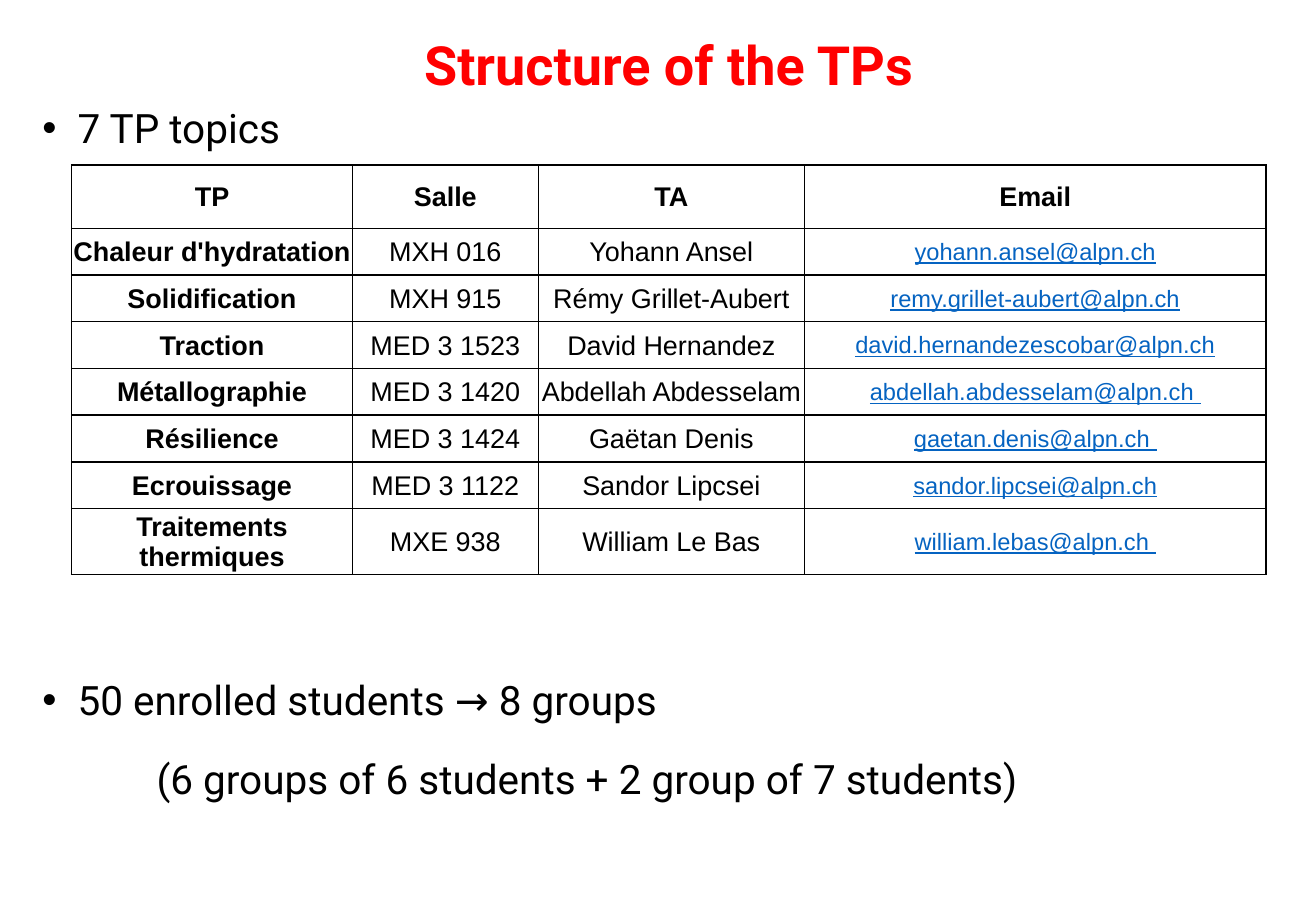
"""Build the slide presenting the structure of the TPs."""
from dataclasses import dataclass

from lxml.etree import SubElement
from pptx import Presentation
from pptx.dml.color import RGBColor
from pptx.enum.text import MSO_ANCHOR as Anchor, MSO_AUTO_SIZE as AutoSize, PP_ALIGN as Align
from pptx.oxml.ns import qn
from pptx.util import Emu, Inches, Pt

SLIDE_WIDTH, SLIDE_HEIGHT = Inches(10.83), Inches(7.5)
BLACK, RED, LINK_BLUE = "000000", "FF0000", "0563C1"
HEADINGS = ("TP", "Salle", "TA", "Email")
COLUMN_SHARES = (0.2133, 0.1413, 0.2022, 0.3509)
HEADING_SHARE, TOPIC_SHARE, LAST_SHARE = 0.0693, 0.0513, 0.072


@dataclass(frozen=True)
class Area:
    """A rectangle in shares of the slide's width and height."""
    left: float
    top: float
    width: float
    height: float

    def lengths(self) -> tuple[Emu, Emu, Emu, Emu]:
        """Return left, top, width and height as lengths."""
        return across(self.left), down(self.top), across(self.width), down(self.height)


@dataclass(frozen=True)
class Topic:
    """One practical session with its room and assistant."""
    title: str
    room: str
    assistant: str
    email: str


@dataclass(frozen=True)
class Point:
    """One line of the body text; spacing in points, indents in inches."""
    text: str
    before: float
    margin: float
    bullet: bool = True


TITLE_AREA = Area(0.0388, 0.036, 0.939, 0.1093)
BODY_AREA = Area(0.0231, 0.1067, 0.8707, 0.788)
TABLE_AREA = Area(0.0545, 0.1813, sum(COLUMN_SHARES), 0.4493)

TOPICS = (
    Topic("Chaleur d'hydratation", "MXH 016", "Yohann Ansel", "yohann.ansel@alpn.ch"),
    Topic("Solidification", "MXH 915", "Rémy Grillet-Aubert", "remy.grillet-aubert@alpn.ch"),
    Topic("Traction", "MED 3 1523", "David Hernandez", "david.hernandezescobar@alpn.ch"),
    Topic("Métallographie", "MED 3 1420", "Abdellah Abdesselam", "abdellah.abdesselam@alpn.ch "),
    Topic("Résilience", "MED 3 1424", "Gaëtan Denis", "gaetan.denis@alpn.ch "),
    Topic("Ecrouissage", "MED 3 1122", "Sandor Lipcsei", "sandor.lipcsei@alpn.ch"),
    Topic("Traitements thermiques", "MXE 938", "William Le Bas", "william.lebas@alpn.ch "),
)
POINTS = (
    Point("7 TP topics", 0, 0.29),
    Point("50 enrolled students → 8 groups", 304, 0.29),
    Point("(6 groups of 6 students + 2 group of 7 students)", 12, 0.94, bullet=False),
)


def across(share: float) -> Emu:
    """Turn a share of the slide's width into a length."""
    return Emu(round(SLIDE_WIDTH * share))


def down(share: float) -> Emu:
    """Turn a share of the slide's height into a length."""
    return Emu(round(SLIDE_HEIGHT * share))


def style(paragraph, font: str, size: float, color: str = BLACK,
          bold: bool = False, underline: bool = False) -> None:
    """Format every run of a paragraph."""
    for run in paragraph.runs:
        run.font.name, run.font.size = font, Pt(size)
        run.font.bold, run.font.underline = bold, underline
        run.font.color.rgb = RGBColor.from_string(color)


def draw_title(slide) -> None:
    """Place and format the slide's title."""
    title = slide.shapes.title
    title.left, title.top, title.width, title.height = TITLE_AREA.lengths()
    frame = title.text_frame
    frame.text = "Structure of the TPs"
    frame.auto_size, frame.vertical_anchor = AutoSize.NONE, Anchor.TOP
    heading = frame.paragraphs[0]
    heading.alignment, heading.line_spacing = Align.CENTER, 0.9
    style(heading, "Roboto", 32, RED, bold=True)


def draw_points(slide) -> None:
    """Write the body lines above and below the table."""
    frame = slide.shapes.add_textbox(*BODY_AREA.lengths()).text_frame
    frame.word_wrap = True
    frame.text = "\n".join(point.text for point in POINTS)
    for paragraph, point in zip(frame.paragraphs, POINTS):
        paragraph.space_before, paragraph.space_after = Pt(point.before), Pt(6)
        style(paragraph, "Roboto", 24)
        properties = paragraph._p.get_or_add_pPr()
        margin = Inches(point.margin)
        properties.set("marL", str(margin))
        properties.set("indent", str(-margin if point.bullet else 0))
        if point.bullet:
            SubElement(properties, qn("a:buFont"), typeface="Arial")
            SubElement(properties, qn("a:buChar"), char="•")


def add_borders(cell) -> None:
    """Draw thin black lines on all four sides of a cell."""
    properties = cell._tc.get_or_add_tcPr()
    for side in ("lnL", "lnR", "lnT", "lnB"):
        line = SubElement(properties, qn(f"a:{side}"), w=str(Pt(1)))
        fill = SubElement(line, qn("a:solidFill"))
        SubElement(fill, qn("a:srgbClr"), val=BLACK)


def fill_cell(cell, text: str, bold: bool, link: bool) -> None:
    """Write one centred table cell."""
    add_borders(cell)
    cell.fill.background()
    cell.margin_left = cell.margin_right = cell.margin_top = Inches(0.01)
    cell.margin_bottom = 0
    cell.vertical_anchor = Anchor.MIDDLE
    cell.text_frame.text = text
    paragraph = cell.text_frame.paragraphs[0]
    paragraph.alignment = Align.CENTER
    style(paragraph, "Arial", 14 if link else 16, LINK_BLUE if link else BLACK, bold, link)


def draw_topics(slide) -> None:
    """Draw the table of topics, rooms and assistants."""
    entries = [HEADINGS] + [(t.title, t.room, t.assistant, t.email) for t in TOPICS]
    table = slide.shapes.add_table(len(entries), len(HEADINGS), *TABLE_AREA.lengths()).table
    table.horz_banding = table.first_row = False
    for column, share in zip(table.columns, COLUMN_SHARES):
        column.width = across(share)
    row_shares = [HEADING_SHARE] + [TOPIC_SHARE] * (len(TOPICS) - 1) + [LAST_SHARE]
    for row, share in zip(table.rows, row_shares):
        row.height = down(share)
    for r, entry in enumerate(entries):
        for c, text in enumerate(entry):
            is_email = r > 0 and c == len(HEADINGS) - 1
            fill_cell(table.cell(r, c), text, bold=r == 0 or c == 0, link=is_email)


def main() -> None:
    """Build and save the presentation."""
    deck = Presentation()
    deck.slide_width, deck.slide_height = SLIDE_WIDTH, SLIDE_HEIGHT
    slide = deck.slides.add_slide(deck.slide_layouts.get_by_name("Title Only"))
    draw_title(slide)
    draw_points(slide)
    draw_topics(slide)
    deck.save("out.pptx")


if __name__ == "__main__":
    main()
